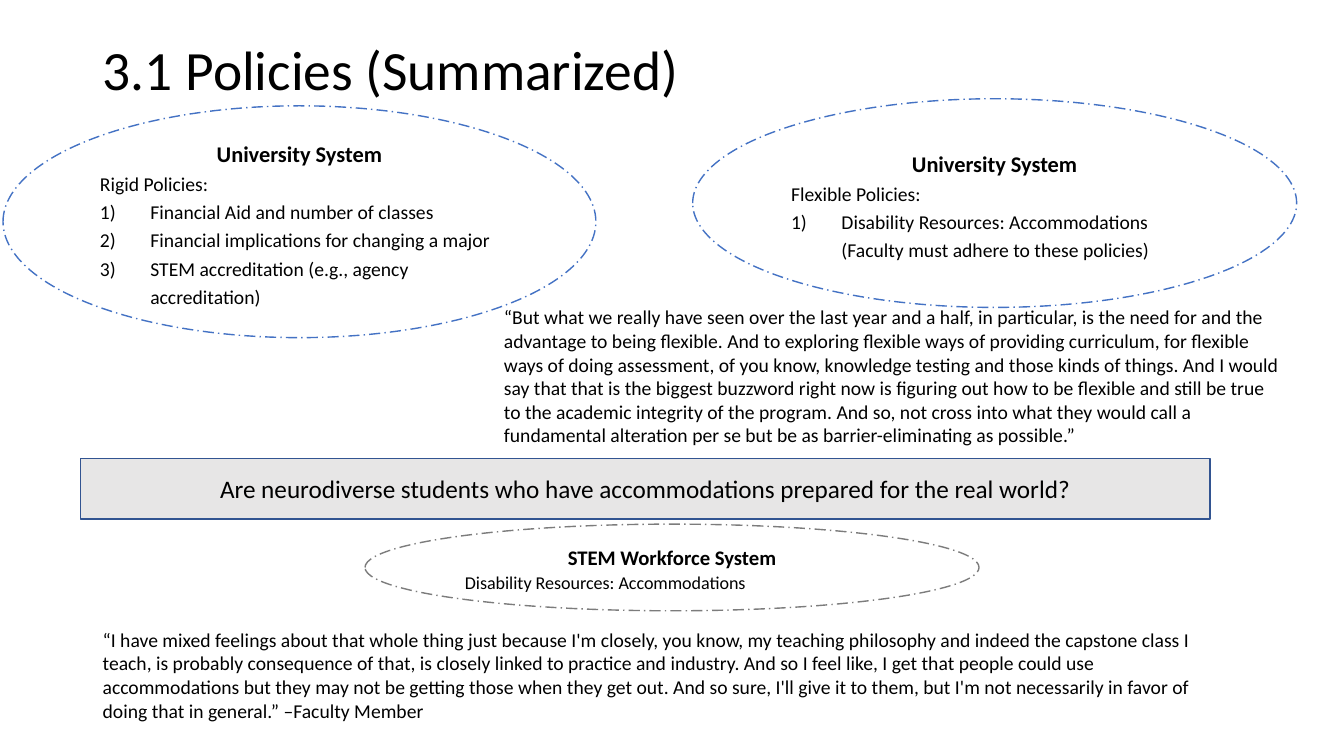
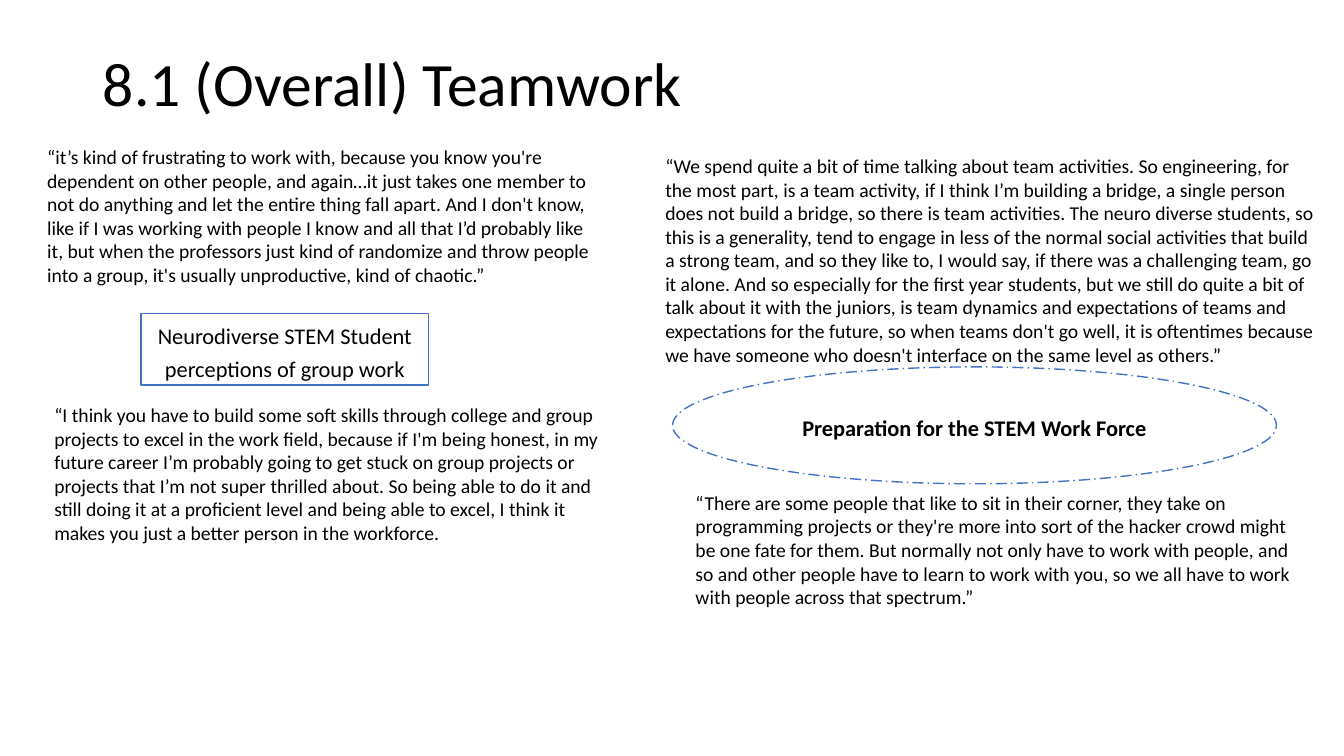
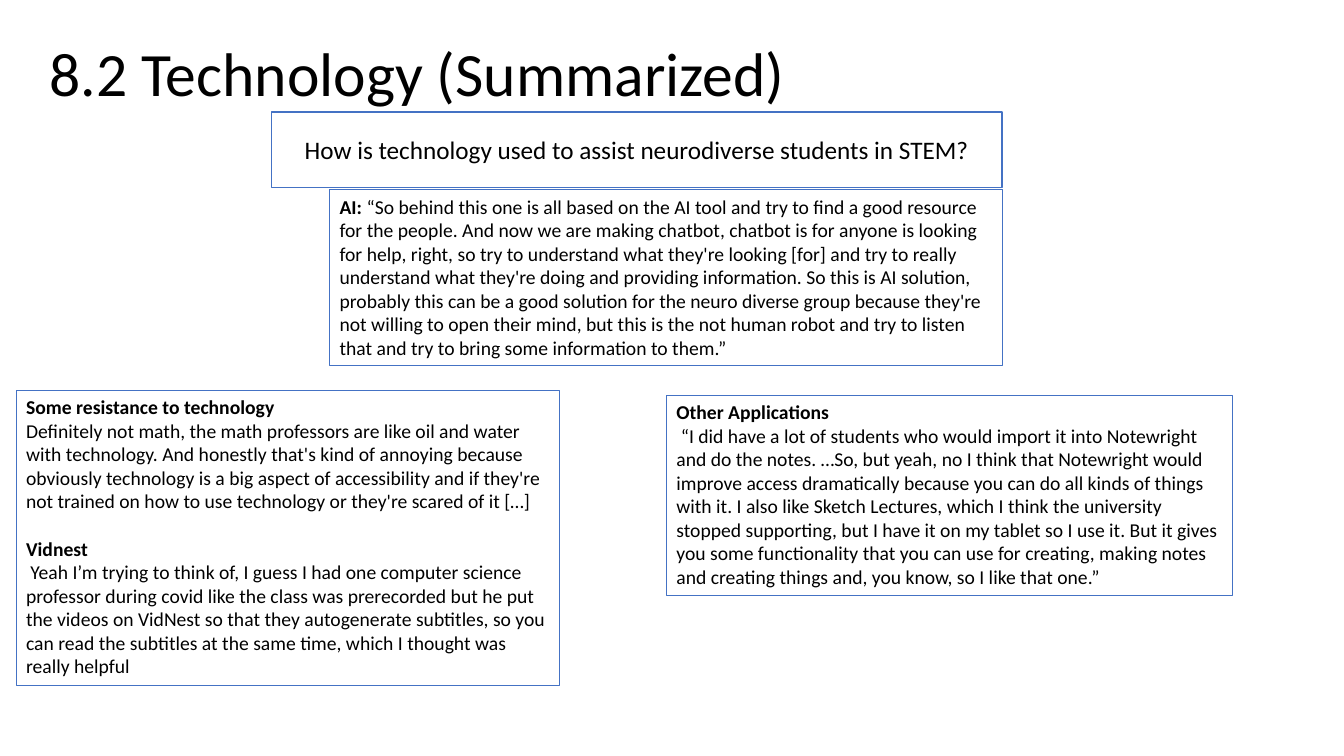
from dataclasses import dataclass

from lxml import etree
from pptx import Presentation
from pptx.dml.color import RGBColor
from pptx.enum.dml import MSO_LINE
from pptx.enum.shapes import MSO_SHAPE
from pptx.enum.text import MSO_ANCHOR, MSO_AUTO_SIZE, PP_ALIGN
from pptx.oxml.ns import qn
from pptx.util import Inches, Pt

FONT = "Calibri"
BLACK = RGBColor(0x00, 0x00, 0x00)
WHITE = RGBColor(0xFF, 0xFF, 0xFF)
BLUE = RGBColor(0x44, 0x72, 0xC4)
DARK_BLUE = RGBColor(0x32, 0x54, 0x91)
GRAY = RGBColor(0x7C, 0x7C, 0x7C)
PALE_GRAY = RGBColor(0xE7, 0xE6, 0xE6)

LEFT, CENTER = PP_ALIGN.LEFT, PP_ALIGN.CENTER
MIDDLE = MSO_ANCHOR.MIDDLE
FIXED, GROW = MSO_AUTO_SIZE.NONE, MSO_AUTO_SIZE.SHAPE_TO_FIT_TEXT
OVAL, RECTANGLE = MSO_SHAPE.OVAL, MSO_SHAPE.RECTANGLE
DASH_DOT = MSO_LINE.LONG_DASH_DOT
TITLE_AND_CONTENT, TITLE_ONLY = 1, 5
NUMBER_INDENT = Inches(0.5)


@dataclass
class Para:
    """A paragraph: a bold lead, then plain text."""
    text: str = ""
    lead: str = ""
    size: float = 14
    align: int = LEFT
    numbered: bool = False
    gap: float = 0


def heading(text, size=16):
    return Para(lead=text, size=size, align=CENTER)


def question(text, size=18):
    return Para(text, size=size, align=CENTER)


@dataclass
class Box:
    """A text block; shape None means a text box that grows with its text."""
    place: tuple
    paras: list
    shape: object = None
    line: RGBColor = None
    fill: RGBColor = WHITE
    spacing: float = 1.0
    is_body: bool = False


SLIDES = [
    {
        "title": "3.1 Policies (Summarized)",
        "title_place": (0.92, 0.4, 11.5, 0.64),
        "title_size": 39.6,
        "boxes": [
            Box((0.03, 1.05, 5.88, 2.3), [
                heading("University System"),
                Para("Rigid Policies:"),
                Para("Financial Aid and number of classes", numbered=True),
                Para("Financial implications for changing a major", numbered=True),
                Para("STEM accreditation (e.g., agency accreditation)", numbered=True),
            ], OVAL, BLUE, spacing=1.2, is_body=True),
            Box((6.87, 0.98, 5.99, 2.07), [
                heading("University System"),
                Para("Flexible Policies:"),
                Para("Disability Resources: Accommodations (Faculty must adhere "
                     "to these policies)", numbered=True),
            ], OVAL, BLUE, spacing=1.2),
            Box((0.8, 4.55, 11.2, 0.6), [
                question("Are neurodiverse students who have accommodations "
                         "prepared for the real world?"),
            ], RECTANGLE, DARK_BLUE, PALE_GRAY),
            Box((3.62, 5.2, 6.09, 0.86), [
                heading("STEM Workforce System", 14.8),
                Para("Disability Resources: Accommodations", size=12.9),
            ], OVAL, GRAY, spacing=1.1),
            Box((4.9, 2.98, 7.96, 1.51), [Para(
                "“But what we really have seen over the last year and a half, in "
                "particular, is the need for and the advantage to being flexible. And "
                "to exploring flexible ways of providing curriculum, for flexible ways "
                "of doing assessment, of you know, knowledge testing and those kinds of "
                "things. And I would say that that is the biggest buzzword right now is "
                "figuring out how to be flexible and still be true to the academic "
                "integrity of the program. And so, not cross into what they would call "
                "a fundamental alteration per se but be as barrier-eliminating as "
                "possible.”")]),
            Box((0.92, 6.18, 11.2, 1.04), [Para(
                "“I have mixed feelings about that whole thing just because I'm "
                "closely, you know, my teaching philosophy and indeed the capstone "
                "class I teach, is probably consequence of that, is closely linked to "
                "practice and industry. And so I feel like, I get that people could use "
                "accommodations but they may not be getting those when they get out. "
                "And so sure, I'll give it to them, but I'm not necessarily in favor of "
                "doing that in general.” –Faculty Member")]),
        ],
    },
    {
        "title": "8.1 (Overall) Teamwork",
        "title_place": (0.92, 0.4, 11.5, 0.91),
        "title_size": 44,
        "boxes": [
            Box((0.44, 3.95, 5.61, 1.51), [Para(
                "“I think you have to build some soft skills through college and group "
                "projects to excel in the work field, because if I'm being honest, in "
                "my future career I’m probably going to get stuck on group projects or "
                "projects that I’m not super thrilled about. So being able to do it and "
                "still doing it at a proficient level and being able to excel, I think "
                "it makes you just a better person in the workforce.")]),
            Box((0.37, 1.39, 5.7, 1.51), [Para(
                "“it’s kind of frustrating to work with, because you know you're "
                "dependent on other people, and again…it just takes one member to not "
                "do anything and let the entire thing fall apart. And I don't know, "
                "like if I was working with people I know and all that I’d probably "
                "like it, but when the professors just kind of randomize and throw "
                "people into a group, it's usually unproductive, kind of chaotic.”")]),
            Box((1.4, 3.11, 2.85, 0.71), [
                question("Neurodiverse STEM Student perceptions of group work", 16),
            ], RECTANGLE, BLUE, spacing=1.2),
            Box((6.8, 4.82, 6.16, 1.28), [Para(
                "“There are some people that like to sit in their corner, they take on "
                "programming projects or they're more into sort of the hacker crowd "
                "might be one fate for them. But normally not only have to work with "
                "people, and so and other people have to learn to work with you, so we "
                "all have to work with people across that spectrum.”")]),
            Box((6.67, 3.64, 5.99, 1.16), [
                heading("Preparation for the STEM Work Force"),
            ], OVAL, BLUE, spacing=1.2),
            Box((6.5, 1.48, 6.67, 2.22), [Para(
                "“We spend quite a bit of time talking about team activities. So "
                "engineering, for the most part, is a team activity, if I think I’m "
                "building a bridge, a single person does not build a bridge, so there "
                "is team activities. The neuro diverse students, so this is a "
                "generality, tend to engage in less of the normal social activities "
                "that build a strong team, and so they like to, I would say, if there "
                "was a challenging team, go it alone. And so especially for the first "
                "year students, but we still do quite a bit of talk about it with the "
                "juniors, is team dynamics and expectations of teams and expectations "
                "for the future, so when teams don't go well, it is oftentimes because "
                "we have someone who doesn't interface on the same level as "
                "others.”")]),
        ],
    },
    {
        "title": "8.2 Technology (Summarized)",
        "title_place": (0.39, 0.03, 11.5, 1.45),
        "title_size": 44,
        "boxes": [
            Box((2.69, 1.11, 7.25, 0.75), [
                question("How is technology used to assist neurodiverse students in "
                         "STEM?"),
            ], RECTANGLE, BLUE),
            Box((0.16, 3.87, 5.39, 2.93), [
                Para(lead="Some resistance to technology"),
                Para("Definitely not math, the math professors are like oil and water "
                     "with technology. And honestly that's kind of annoying because "
                     "obviously technology is a big aspect of accessibility and if "
                     "they're not trained on how to use technology or they're scared "
                     "of it […]"),
                Para(lead="Vidnest", gap=17),
                Para(" Yeah I’m trying to think of, I guess I had one computer science "
                     "professor during covid like the class was prerecorded but he put "
                     "the videos on VidNest so that they autogenerate subtitles, so "
                     "you can read the subtitles at the same time, which I thought was "
                     "really helpful"),
            ], line=BLUE),
            Box((6.61, 3.92, 5.61, 1.99), [
                Para(lead="Other Applications"),
                Para(" “I did have a lot of students who would import it into Notewright "
                     "and do the notes. …So, but yeah, no I think that Notewright would "
                     "improve access dramatically because you can do all kinds of "
                     "things with it. I also like Sketch Lectures, which I think the "
                     "university stopped supporting, but I have it on my tablet so I "
                     "use it. But it gives you some functionality that you can use for "
                     "creating, making notes and creating things and, you know, so I "
                     "like that one.”"),
            ], line=BLUE),
            Box((3.27, 1.88, 6.67, 1.75), [Para(
                "“So behind this one is all based on the AI tool and try to find a good "
                "resource for the people. And now we are making chatbot, chatbot is for "
                "anyone is looking for help, right, so try to understand what they're "
                "looking [for] and try to really understand what they're doing and "
                "providing information. So this is AI solution, probably this can be a "
                "good solution for the neuro diverse group because they're not willing "
                "to open their mind, but this is the not human robot and try to listen "
                "that and try to bring some information to them.”", lead="AI: ")],
                line=BLUE),
        ],
    },
]


def move(shape, place):
    shape.left, shape.top, shape.width, shape.height = map(Inches, place)


def format_span(span, size, bold=False):
    span.font.name = FONT
    span.font.size = Pt(size)
    span.font.bold = bold
    span.font.color.rgb = BLACK


def set_bullet(paragraph, numbered):
    properties = paragraph._p.get_or_add_pPr()
    indent = NUMBER_INDENT if numbered else 0
    properties.set("marL", str(indent))
    properties.set("indent", str(-indent))
    if numbered:
        etree.SubElement(properties, qn("a:buAutoNum"), type="arabicParenR")
    else:
        etree.SubElement(properties, qn("a:buNone"))


def write_paras(frame, paras, spacing):
    for index, para in enumerate(paras):
        paragraph = frame.paragraphs[0] if index == 0 else frame.add_paragraph()
        paragraph.alignment = para.align
        paragraph.line_spacing = spacing
        paragraph.space_before = Pt(para.gap)
        set_bullet(paragraph, para.numbered)
        for text, bold in ((para.lead, True), (para.text, False)):
            if text:
                span = paragraph.add_run()
                span.text = text
                format_span(span, para.size, bold)


def make_oval(placeholder):
    geometry = etree.Element(qn("a:prstGeom"), prst="ellipse")
    etree.SubElement(geometry, qn("a:avLst"))
    placeholder._element.spPr.find(qn("a:xfrm")).addnext(geometry)


def add_box(slide, box):
    if box.is_body:
        shape = slide.placeholders[1]
        move(shape, box.place)
        make_oval(shape)
    elif box.shape is None:
        shape = slide.shapes.add_textbox(*map(Inches, box.place))
    else:
        shape = slide.shapes.add_shape(box.shape, *map(Inches, box.place))
        shape.shadow.inherit = False
    if box.shape is not None:
        shape.fill.solid()
        shape.fill.fore_color.rgb = box.fill
    if box.line is not None:
        shape.line.color.rgb = box.line
        shape.line.width = Pt(0.75 if box.shape is None else 1)
    if box.shape == OVAL:
        shape.line.dash_style = DASH_DOT
    frame = shape.text_frame
    frame.word_wrap = True
    frame.auto_size = GROW if box.shape is None else FIXED
    if box.shape is not None:
        frame.vertical_anchor = MIDDLE
    write_paras(frame, box.paras, box.spacing)


def add_title(slide, text, place, size):
    title = slide.shapes.title
    move(title, place)
    frame = title.text_frame
    frame.text = text
    frame.auto_size = FIXED
    frame.vertical_anchor = MIDDLE
    paragraph = frame.paragraphs[0]
    paragraph.alignment = LEFT
    paragraph.line_spacing = 0.9
    format_span(paragraph.runs[0], size)


def main():
    deck = Presentation()
    deck.slide_width, deck.slide_height = Inches(13.33), Inches(7.5)
    for page in SLIDES:
        has_body = any(box.is_body for box in page["boxes"])
        layout = TITLE_AND_CONTENT if has_body else TITLE_ONLY
        slide = deck.slides.add_slide(deck.slide_layouts[layout])
        add_title(slide, page["title"], page["title_place"], page["title_size"])
        for box in page["boxes"]:
            add_box(slide, box)
    deck.save("out.pptx")


if __name__ == "__main__":
    main()
